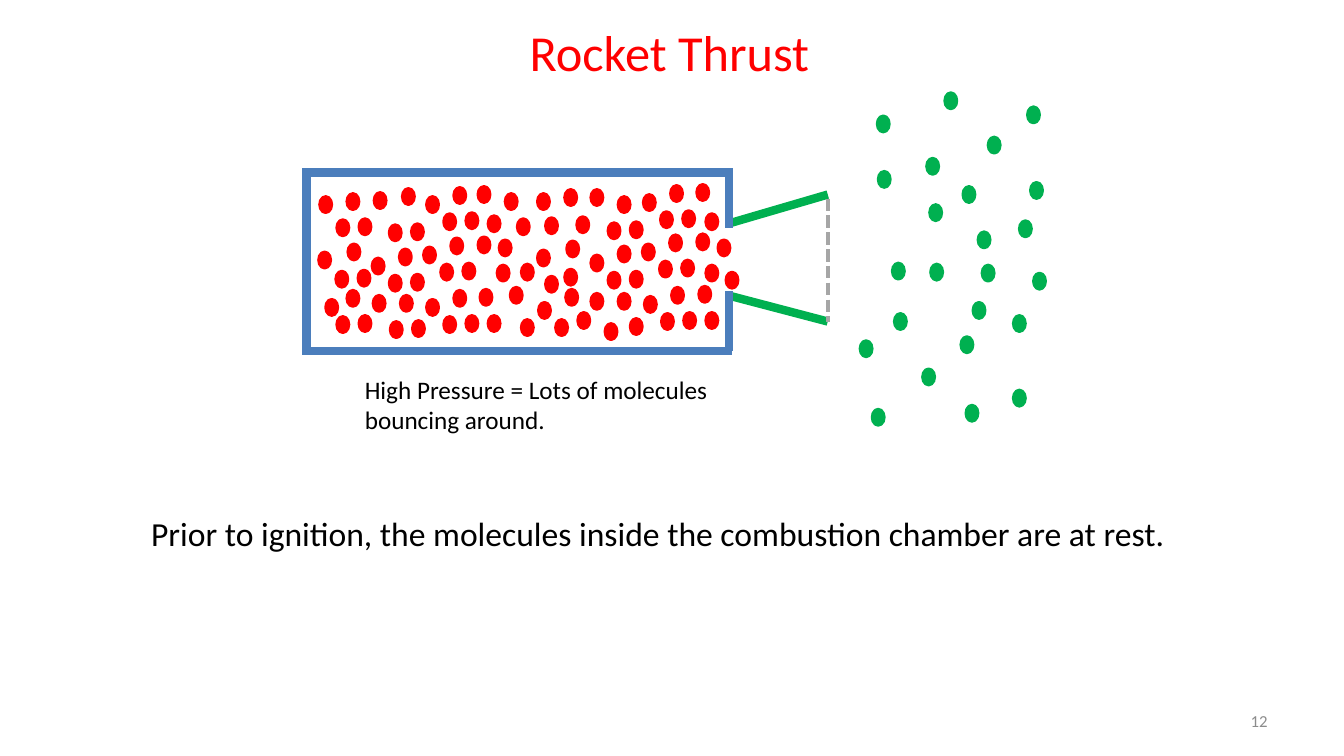
"""Build the Rocket Thrust slide: a chamber of packed molecules, a nozzle and thin air outside."""
import itertools

import pptx
import pptx.dml.color
import pptx.enum.dml
import pptx.enum.shapes
import pptx.enum.text
import pptx.oxml.ns
import pptx.util
from lxml import etree

PX = 9144
RED, GREEN, BLUE, GREY = "FF0000", "00B050", "4B7EBC", "A6A6A6"
ALIGN = pptx.enum.text.PP_ALIGN
ANCHOR = pptx.enum.text.MSO_ANCHOR

prs = pptx.Presentation()
prs.slide_width, prs.slide_height = 1333 * PX, 750 * PX
s = prs.slides.add_slide(prs.slide_layouts[6])


def rgb(color):
    return pptx.dml.color.RGBColor.from_string(color)


def add_text(text, box, size, color="000000", align=ALIGN.LEFT, anchor=ANCHOR.TOP):
    tf = s.shapes.add_textbox(*[v * PX for v in box]).text_frame
    tf.word_wrap = True
    tf.vertical_anchor = anchor
    p = tf.paragraphs[0]
    p.alignment = align
    r = p.add_run()
    r.text = text
    r.font.name = "Calibri"
    r.font.size = pptx.util.Pt(size)
    r.font.color.rgb = rgb(color)


add_text("Rocket Thrust", (214, 8, 900, 85), 36, RED, ALIGN.CENTER, ANCHOR.MIDDLE)
add_text("12", (956, 695, 311, 40), 12, "8C8C8C", ALIGN.RIGHT, ANCHOR.MIDDLE)

WALL = 6
HALF = 4
LEFT, RIGHT, TOP, BOTTOM = 304, 723, 171, 348
THROAT_TOP, THROAT_BOTTOM = 226, 289
EXIT, EXIT_TOP, EXIT_BOTTOM = 821, 193, 319

nozzle = [
    (EXIT, EXIT_TOP, RIGHT - 1, THROAT_TOP - HALF),
    (EXIT, EXIT_BOTTOM, RIGHT - 1, THROAT_BOTTOM + HALF),
]
chamber_walls = [
    (LEFT - HALF, TOP, RIGHT + 3, TOP),
    (LEFT - HALF, BOTTOM, RIGHT + 3, BOTTOM),
    (LEFT, TOP + HALF, LEFT, BOTTOM),
    (RIGHT, TOP - HALF, RIGHT, THROAT_TOP),
    (RIGHT, THROAT_BOTTOM, RIGHT, BOTTOM),
]
exit_plane = [(EXIT, EXIT_TOP + HALF, EXIT, EXIT_BOTTOM)]

for lines, color, width in ((nozzle, GREEN, WALL), (chamber_walls, BLUE, WALL), (exit_plane, GREY, 3)):
    for ends in lines:
        line = s.shapes.add_connector(
            pptx.enum.shapes.MSO_CONNECTOR.STRAIGHT, *[v * PX for v in ends])
        line.line.color.rgb = rgb(color)
        line.line.width = pptx.util.Pt(width)
        if lines is exit_plane:
            line.line.dash_style = pptx.enum.dml.MSO_LINE.SQUARE_DOT
        etree.SubElement(line._element.spPr, pptx.oxml.ns.qn("a:effectLst"))

CLUSTER = {"left": (0, 0), "low": (17, 17), "right": (39, 16), "top": (27, -9)}
HALF_STARTS, COLUMN_STEP, COLUMNS_PER_HALF = (317, 533), 53, 4
ROW_START, ROW_STEP, ROWS = 195, 51, 3
columns = [start + COLUMN_STEP * i for start in HALF_STARTS for i in range(COLUMNS_PER_HALF)]
rows = [ROW_START + ROW_STEP * i for i in range(ROWS)]

cluster_drift = {
    (0, 0): (0, 6), (0, 1): (-1, 6),
    (1, 0): (-1, 11), (1, 1): (-1, 10), (1, 2): (0, 5),
    (2, 1): (-3, -1),
    (3, 0): (-2, 6),
    (4, 0): (0, 4), (4, 1): (0, 2), (4, 2): (1, 3),
    (5, 0): (0, 9), (5, 1): (0, 7), (5, 2): (0, 3),
    (6, 0): (-1, -2), (6, 1): (-2, -4), (6, 2): (0, -3),
}
molecule_drift = {
    (0, 0): {"left": (0, -6)},
    (0, 1): {"left": (0, -2), "top": (2, -1)},
    (0, 2): {"left": (6, 0)},
    (1, 0): {"left": (2, -15), "top": (3, -10)},
    (1, 2): {"left": (0, -9)},
    (3, 0): {"left": (0, -16), "low": (-7, -4)},
    (3, 1): {"left": (-2, -11), "right": (2, 0), "top": (-8, 1)},
    (3, 2): {"left": (0, -10), "low": (-9, -1), "right": (2, 4), "top": (3, -3)},
    (4, 0): {"left": (0, -7), "low": (-9, 0), "top": (0, -2)},
    (4, 1): {"low": (-9, 9), "right": (-12, 3), "top": (2, 0)},
    (4, 2): {"right": (0, -6), "top": (0, -4)},
    (5, 0): {"left": (0, -16)},
    (5, 2): {"left": (0, -9), "low": (-3, 4)},
    (7, 0): {"left": (-1, -12), "low": (-9, 0)},
    (7, 1): {"left": (-1, -14), "low": (-9, 0), "top": (-7, 1)},
    (7, 2): {"left": (1, -13), "low": (-9, -4), "top": (1, -18)},
}
beyond_wall = {(7, 0, "right"), (7, 1, "right"), (7, 2, "right"), (7, 0, "top")}

packed = []
for (i, x), (j, y) in itertools.product(enumerate(columns), enumerate(rows)):
    for place, offset in CLUSTER.items():
        if (i, j, place) not in beyond_wall:
            shifts = (
                (x, y),
                offset,
                cluster_drift.get((i, j), (0, 0)),
                molecule_drift.get((i, j), {}).get(place, (0, 0)),
            )
            packed.append([sum(axis) for axis in zip(*shifts)])

scattered = [
    (870, 115), (919, 157), (955, 185), (871, 170), (885, 261), (853, 338),
    (887, 311), (923, 262), (937, 92), (1022, 181), (1011, 219), (1019, 106),
    (922, 203), (974, 263), (1025, 271), (970, 230), (865, 406), (1005, 387),
    (953, 334), (915, 366), (965, 300), (958, 402), (980, 136), (1005, 313),
]
for molecules, color in ((packed, RED), (scattered, GREEN)):
    for x, y in molecules:
        sp = s.shapes.add_shape(
            pptx.enum.shapes.MSO_SHAPE.OVAL, x * PX, y * PX, 12 * PX, 16 * PX)
        sp.shadow.inherit = False
        sp.fill.solid()
        sp.fill.fore_color.rgb = rgb(color)
        sp.line.color.rgb = rgb(color)
        sp.line.width = pptx.util.Pt(2)

add_text("High Pressure = Lots of molecules bouncing around.", (352, 366, 360, 71), 18)
add_text("Prior to ignition, the molecules inside the combustion chamber are at rest.",
         (140, 504, 1087, 50), 24)

prs.save("out.pptx")
